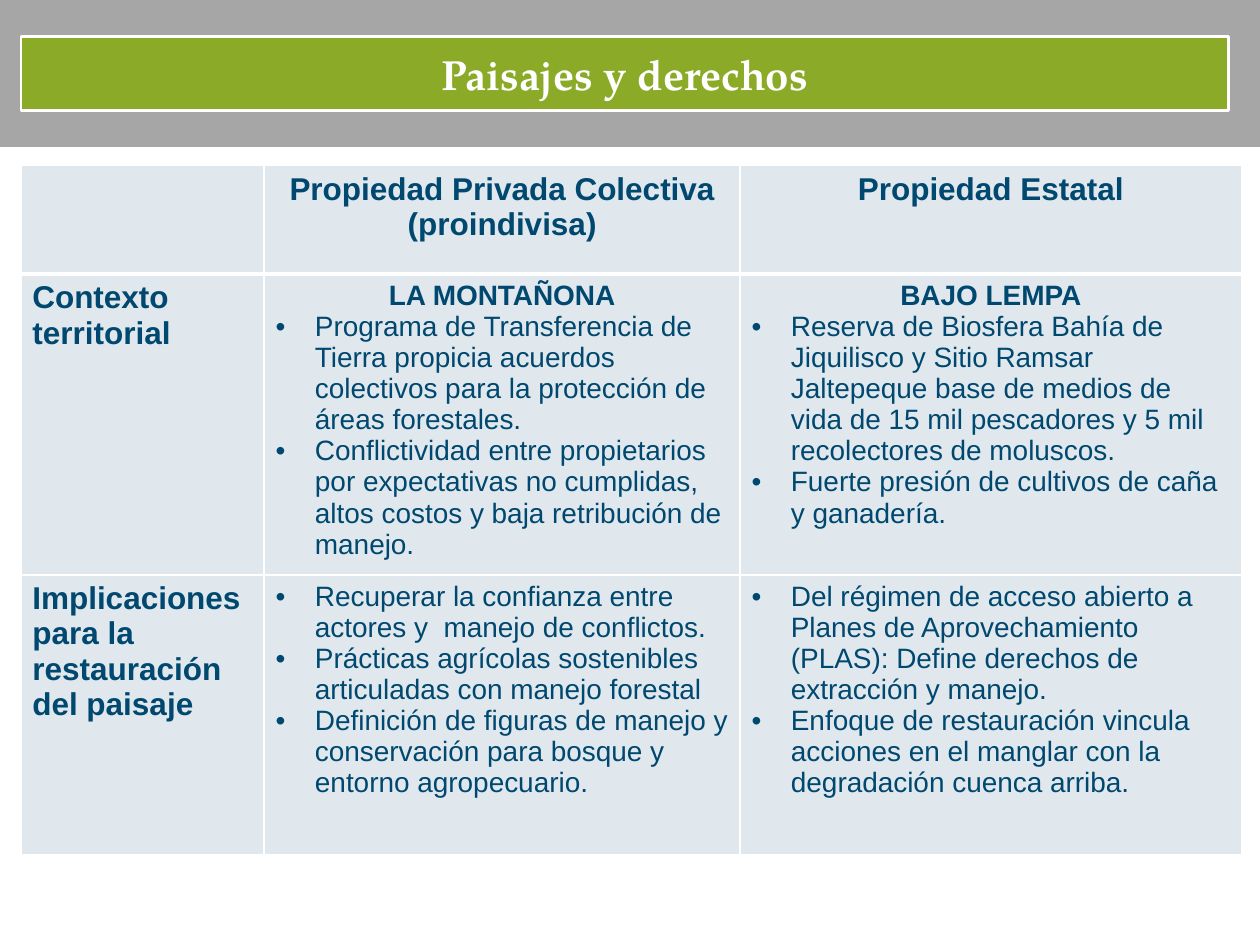
from dataclasses import dataclass

from lxml.etree import SubElement
from pptx import Presentation
from pptx.dml.color import RGBColor
from pptx.enum.shapes import MSO_SHAPE
from pptx.enum.text import MSO_ANCHOR, MSO_AUTO_SIZE, PP_ALIGN
from pptx.oxml.ns import qn
from pptx.util import Pt

WHITE, NAVY, GREEN, GRAY = "FFFFFF", "00486F", "8BAA27", "A6A6A6"


@dataclass(frozen=True)
class Style:
    size: int
    bold: bool
    align: PP_ALIGN = PP_ALIGN.LEFT
    indent: float = 0


@dataclass(frozen=True)
class Para:
    text: str
    style: Style


HEAD = Style(18, True, PP_ALIGN.CENTER)
LABEL = Style(18, True)
PLACE = Style(16, True, PP_ALIGN.CENTER)
POINT = Style(16, False, indent=22.5)

COLS = (139, 272, 286.5)
ROWS = (62, 172, 160)
GRID = (
    ((),
     (Para("Propiedad Privada Colectiva (proindivisa)", HEAD),),
     (Para("Propiedad Estatal", HEAD),)),
    ((Para("Contexto territorial", LABEL),),
     (Para("LA MONTAÑONA", PLACE),
      Para("Programa de Transferencia de Tierra propicia acuerdos colectivos "
           "para la protección de áreas forestales.", POINT),
      Para("Conflictividad entre propietarios por expectativas no cumplidas, "
           "altos costos y baja retribución de manejo.", POINT)),
     (Para("BAJO LEMPA", PLACE),
      Para("Reserva de Biosfera Bahía de Jiquilisco y Sitio Ramsar Jaltepeque "
           "base de medios de vida de 15 mil pescadores y 5 mil recolectores "
           "de moluscos.", POINT),
      Para("Fuerte presión de cultivos de caña y ganadería.", POINT))),
    ((Para("Implicaciones para la restauración del paisaje", LABEL),),
     (Para("Recuperar la confianza entre actores y  manejo de conflictos.", POINT),
      Para("Prácticas agrícolas sostenibles articuladas con manejo forestal", POINT),
      Para("Definición de figuras de manejo y conservación para bosque y "
           "entorno agropecuario.", POINT)),
     (Para("Del régimen de acceso abierto a Planes de Aprovechamiento (PLAS): "
           "Define derechos de extracción y manejo.", POINT),
      Para("Enfoque de restauración vincula acciones en el manglar con la "
           "degradación cuenca arriba.", POINT))),
)


def paint(target, color: str) -> None:
    target.solid()
    target.fore_color.rgb = RGBColor.from_string(color)


def set_font(para, name: str, size: float, bold: bool, color: str) -> None:
    font = para.font
    font.name, font.size, font.bold = name, Pt(size), bold
    paint(font.fill, color)


def add_band(slide) -> None:
    band = slide.shapes.add_shape(MSO_SHAPE.RECTANGLE, 0, 0, Pt(720), Pt(84))
    band.shadow.inherit = False
    paint(band.fill, GRAY)
    band.line.fill.background()
    slide.shapes.title._element.addprevious(band._element)


def set_title(title, text: str) -> None:
    title.left, title.top, title.width, title.height = Pt(12), Pt(21), Pt(690), Pt(42)
    paint(title.fill, GREEN)
    paint(title.line.fill, WHITE)
    title.line.width = Pt(1.5)
    frame = title.text_frame
    frame.text = text
    frame.auto_size = MSO_AUTO_SIZE.NONE
    frame.vertical_anchor = MSO_ANCHOR.MIDDLE
    para = frame.paragraphs[0]
    para.alignment = PP_ALIGN.CENTER
    set_font(para, "TeX Gyre Pagella", 24, True, WHITE)


def add_edge(cell, side: str, width: float) -> None:
    line = SubElement(cell._tc.get_or_add_tcPr(), qn(f"a:ln{side}"), w=str(Pt(width)))
    fill = SubElement(line, qn("a:solidFill"))
    SubElement(fill, qn("a:srgbClr"), val=WHITE)


def tint(cell, color: str, alpha: int) -> None:
    paint(cell.fill, color)
    shade = cell._tc.tcPr.find(f"{qn('a:solidFill')}/{qn('a:srgbClr')}")
    SubElement(shade, qn("a:alpha"), val=str(alpha * 1000))


def write(para, item: Para) -> None:
    style = item.style
    para.text = item.text
    para.alignment = style.align
    if style.indent:
        props = para._p.get_or_add_pPr()
        props.set("marL", str(Pt(style.indent)))
        props.set("indent", str(-Pt(style.indent)))
        SubElement(props, qn("a:buFont"), typeface="Arial")
        SubElement(props, qn("a:buChar"), char="•")
    set_font(para, "Arial", style.size, style.bold, NAVY)


def fill_cell(cell, items: tuple[Para, ...], row: int) -> None:
    cell.margin_left = cell.margin_right = Pt(6.5)
    widths = {"L": 1, "R": 1, "T": 3 if row == 1 else 1, "B": 3 if row == 0 else 1}
    for side, width in widths.items():
        add_edge(cell, side, width)
    tint(cell, NAVY, 12)
    frame = cell.text_frame
    for n, item in enumerate(items):
        write(frame.add_paragraph() if n else frame.paragraphs[0], item)


def add_grid(slide) -> None:
    table = slide.shapes.add_table(len(ROWS), len(COLS), Pt(12), Pt(94.5),
                                   Pt(sum(COLS)), Pt(sum(ROWS))).table
    table.first_row = table.horz_banding = False
    for col, width in zip(table.columns, COLS):
        col.width = Pt(width)
    for r, (height, line) in enumerate(zip(ROWS, GRID)):
        table.rows[r].height = Pt(height)
        for c, items in enumerate(line):
            fill_cell(table.cell(r, c), items, r)


def main() -> None:
    deck = Presentation()
    deck.slide_width, deck.slide_height = Pt(720), Pt(540)
    slide = deck.slides.add_slide(deck.slide_layouts[5])
    paint(slide.background.fill, WHITE)
    add_band(slide)
    set_title(slide.shapes.title, "Paisajes y derechos")
    add_grid(slide)
    deck.save("out.pptx")


if __name__ == "__main__":
    main()
